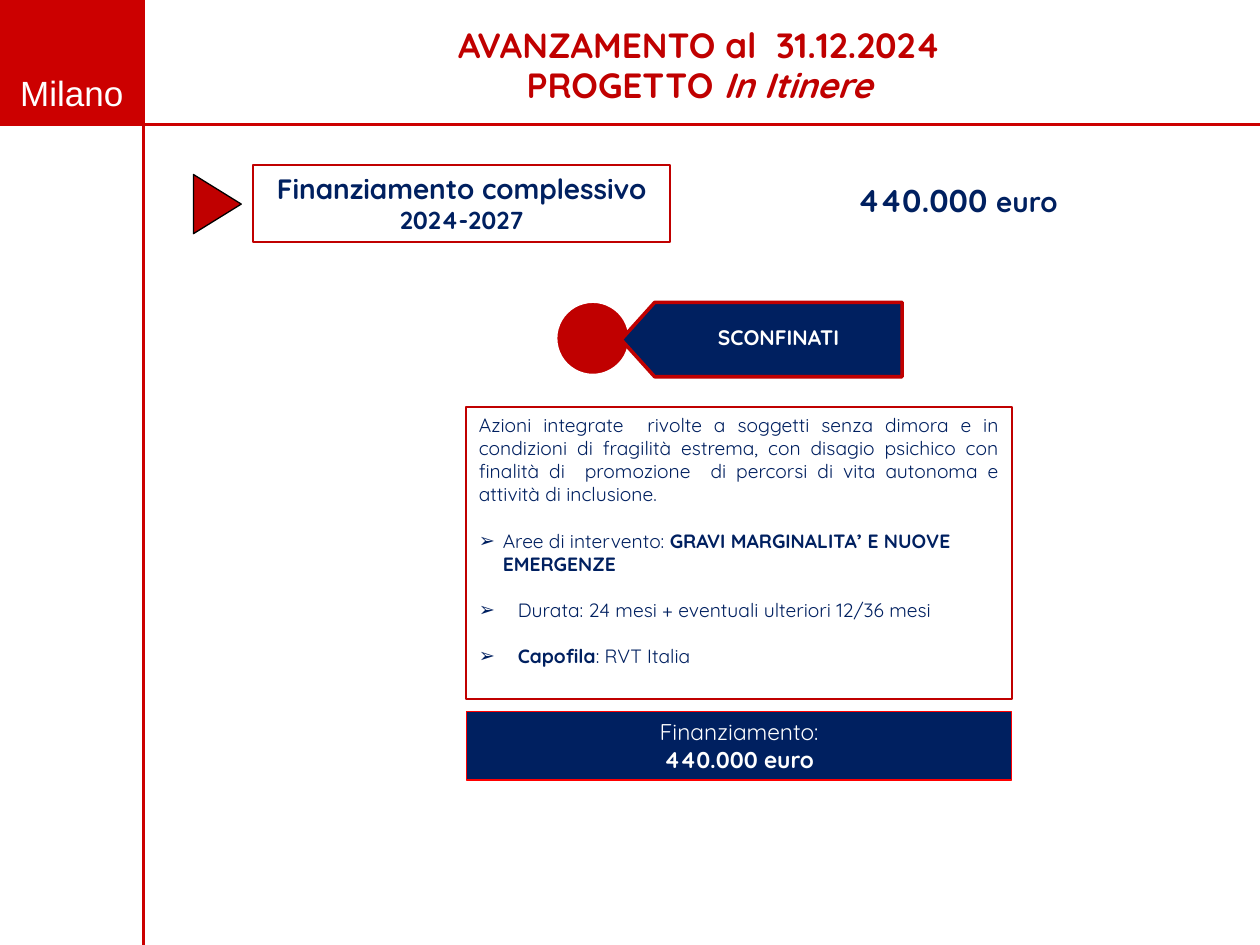
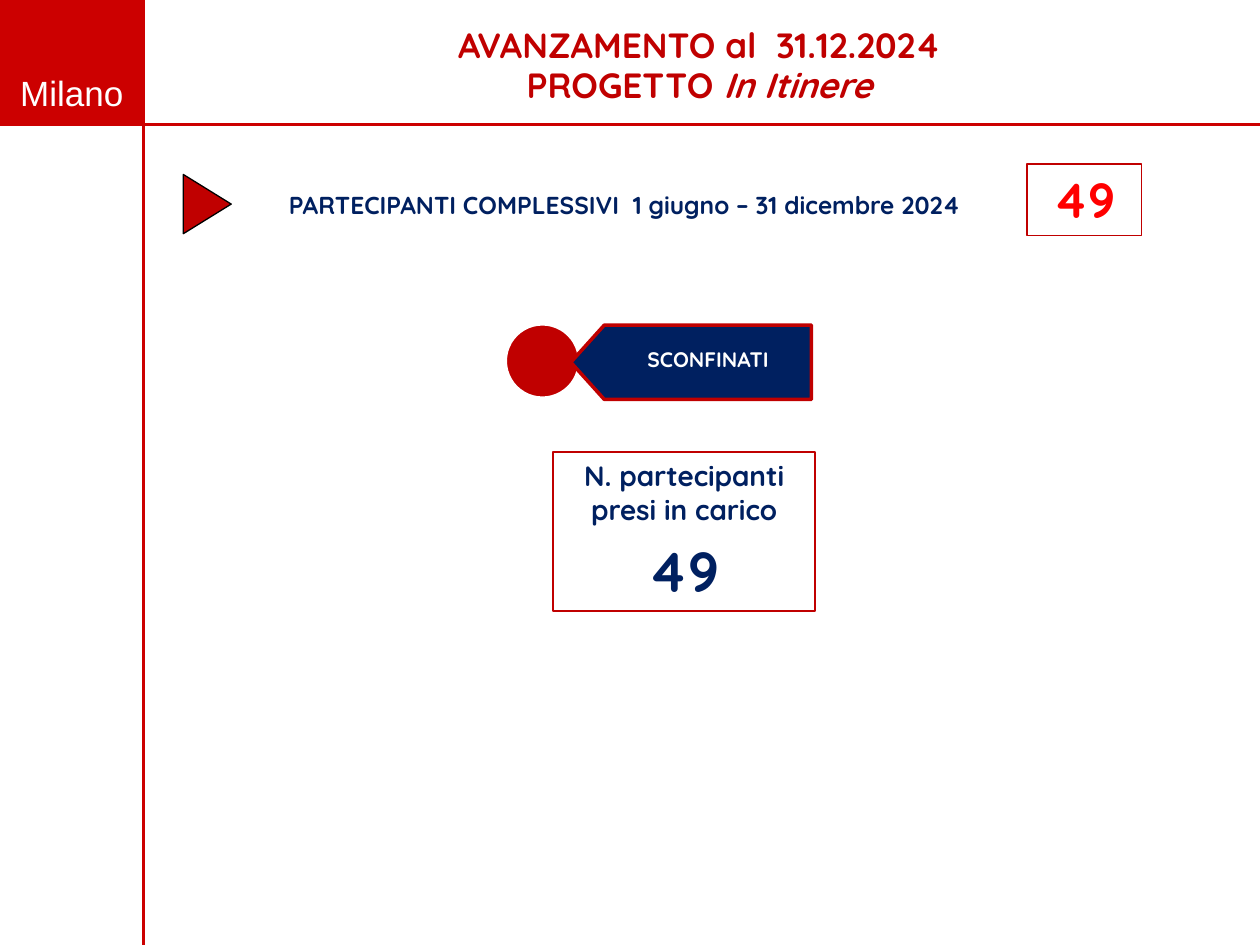
from lxml import etree
from pptx import Presentation
from pptx import util as u
from pptx.dml.color import RGBColor
from pptx.enum import shapes, text
from pptx.oxml import ns

FRAME_RED = RGBColor(0xCC, 0x00, 0x00)
RED = RGBColor(0xC0, 0x00, 0x00)
BRIGHT_RED = RGBColor(0xFF, 0x00, 0x00)
NAVY = RGBColor(0x00, 0x20, 0x60)
WHITE = RGBColor(0xFF, 0xFF, 0xFF)
BLACK = RGBColor(0x00, 0x00, 0x00)

FONT = "Quicksand"
BAND_WIDTH, BAND_HEIGHT = 1.14, 0.99
TOP, MIDDLE = text.MSO_ANCHOR.TOP, text.MSO_ANCHOR.MIDDLE
CENTER, LEFT, JUSTIFY = text.PP_ALIGN.CENTER, text.PP_ALIGN.LEFT, text.PP_ALIGN.JUSTIFY
BOLD = {"bold": True}


def apply_format(target, values):
    for name, value in values.items():
        setattr(target, name, value)


def place(*lengths):
    return [u.Inches(length) for length in lengths]


def set_list_marker(paragraph, indent, marker):
    properties = paragraph._p.get_or_add_pPr()
    properties.set("marL", str(u.Inches(indent)))
    properties.set("indent", str(-u.Inches(indent)))
    if marker:
        bullet = etree.SubElement(properties, ns.qn("a:buChar"))
        bullet.set("char", marker)
    else:
        etree.SubElement(properties, ns.qn("a:buNone"))


def add_runs(paragraph, runs, size, color, font=FONT):
    for words, style in runs:
        if words == "\n":
            paragraph.add_line_break()
            continue
        run = paragraph.add_run()
        run.text = words
        apply_format(run.font, {"name": font, "size": u.Pt(size), **style})
        run.font.color.rgb = color


def prepare_frame(holder, anchor=TOP, left=0.1, right=0.1):
    frame = holder.text_frame
    apply_format(frame, {
        "word_wrap": True, "auto_size": text.MSO_AUTO_SIZE.NONE,
        "vertical_anchor": anchor,
        "margin_left": u.Inches(left), "margin_right": u.Inches(right),
        "margin_top": u.Inches(0.05), "margin_bottom": u.Inches(0.05),
    })
    return frame


def write_lines(holder, lines, color, font=FONT, spacing=None, **frame_options):
    frame = prepare_frame(holder, **frame_options)
    for index, (runs, size) in enumerate(lines):
        line = frame.add_paragraph() if index else frame.paragraphs[0]
        apply_format(line, {"alignment": CENTER, **(spacing or {})})
        add_runs(line, runs, size, color, font)
    return frame


def add_label(slide, position, lines, color, **options):
    label = slide.shapes.add_textbox(*place(*position))
    write_lines(label, lines, color, **options)
    return label


def set_outline(holder, color, width):
    holder.line.color.rgb = color
    holder.line.width = u.Pt(width)


def add_figure(slide, kind, position, fill=None, outline=None, width=1, rotation=0):
    figure = slide.shapes.add_shape(kind, *place(*position))
    figure.shadow.inherit = False
    figure.rotation = rotation
    if fill is None:
        figure.fill.background()
    else:
        figure.fill.solid()
        figure.fill.fore_color.rgb = fill
    if outline is None:
        figure.line.fill.background()
    else:
        set_outline(figure, outline, width)
    return figure


def add_box(slide, position, lines, color, fill=None, outline=RED, width=1):
    box = add_figure(slide, shapes.MSO_SHAPE.RECTANGLE, position, fill, outline, width)
    return write_lines(box, lines, color)


def add_rule(slide, *ends):
    rule = slide.shapes.add_connector(shapes.MSO_CONNECTOR.STRAIGHT, *place(*ends))
    set_outline(rule, FRAME_RED, 1.5)
    etree.SubElement(rule.element.spPr, ns.qn("a:effectLst"))
    return rule


def add_frame_to_master(deck, slide):
    band = add_figure(slide, shapes.MSO_SHAPE.RECTANGLE,
                      (0, 0, BAND_WIDTH, BAND_HEIGHT), FRAME_RED)
    rules = [add_rule(slide, 0, BAND_HEIGHT, 10, BAND_HEIGHT),
             add_rule(slide, BAND_WIDTH, 7.5, BAND_WIDTH, 0)]
    city = add_label(slide, (0, 0.52, BAND_WIDTH, 0.43),
                     [([("Milano", {})], 20)], WHITE, font="Arial")
    for part in (band, *rules, city):
        deck.slide_master.shapes.element.append(part.element)


def move(holder, position):
    sides = ("left", "top", "width", "height")
    apply_format(holder, dict(zip(sides, place(*position))))


def set_title(slide):
    title = slide.shapes.title
    move(title, (1.3, 0.13, 8.5, 0.79))
    runs = [("AVANZAMENTO al  31.12.2024", BOLD), ("\n", {}), ("PROGETTO ", BOLD),
            ("In Itinere", {"bold": True, "italic": True})]
    write_lines(title, [(runs, 20)], RED, anchor=MIDDLE, spacing={"line_spacing": 0.95})


def add_pointer(slide, left):
    add_figure(slide, shapes.MSO_SHAPE.ISOSCELES_TRIANGLE, (left, 1.43, 0.47, 0.38),
               RED, BLACK, 0.75, rotation=90)


def add_project_tag(slide, left, top, width):
    add_figure(slide, shapes.MSO_SHAPE.OVAL, (left, top, 0.59, 0.59), RED, WHITE, 2)
    tag_left = left + 0.52
    tag = add_figure(slide, shapes.MSO_SHAPE.PENTAGON, (tag_left, top + 0.01, width, 0.59),
                     NAVY, RED, 2, rotation=180)
    tag.adjustments[0] = 0.45
    add_label(slide, (tag_left + 0.15, top, width - 0.2, 0.59),
              [([("SCONFINATI", BOLD)], 12)], WHITE, anchor=MIDDLE, left=0.26, right=0.09,
              spacing={"line_spacing": 0.9, "space_after": u.Pt(4.2)})


def fill_description(body):
    move(body, (3.7, 3.23, 4.33, 2.32))
    set_outline(body, RED, 1)
    frame = prepare_frame(body)
    entries = [
        (0, None, JUSTIFY, [("Azioni integrate  rivolte a soggetti senza dimora e in condizioni "
                             "di fragilità estrema, con disagio psichico con finalità di  "
                             "promozione  di percorsi di vita autonoma e attività di "
                             "inclusione.", {})]),
        (0.19, "➢", LEFT, [("Aree di intervento: ", {}),
                           ("GRAVI MARGINALITA’ E NUOVE EMERGENZE", BOLD)]),
        (0.31, "➢", LEFT, [("Durata: 24 mesi + eventuali ulteriori 12/36 mesi", {})]),
        (0.31, "➢", LEFT, [("Capofila", BOLD), (": RVT Italia", {})]),
    ]
    for index, (indent, marker, alignment, runs) in enumerate(entries):
        entry = frame.add_paragraph() if index else frame.paragraphs[0]
        set_list_marker(entry, indent, marker)
        apply_format(entry, {"alignment": alignment,
                             "space_before": u.Pt(13.2 if index else 0)})
        add_runs(entry, runs, 11, NAVY)


def build_funding(slide):
    set_title(slide)
    add_pointer(slide, 1.49)
    add_box(slide, (2.01, 1.31, 3.31, 0.61),
            [([("Finanziamento complessivo", BOLD)], 16), ([("2024-2027", BOLD)], 14)], NAVY)
    add_label(slide, (5.63, 1.39, 3.94, 0.4),
              [([("440.000 ", BOLD), ("euro", {"bold": True, "size": u.Pt(16)})], 18)], NAVY)
    add_project_tag(slide, 4.41, 2.39, 2.23)
    fill_description(slide.placeholders[1])
    add_box(slide, (3.7, 5.65, 4.33, 0.54),
            [([("Finanziamento:", {})], 13), ([("440.000 euro", BOLD)], 13)],
            WHITE, NAVY, BRIGHT_RED, 0.75)


def build_participants(slide):
    set_title(slide)
    add_pointer(slide, 1.41)
    add_label(slide, (1.85, 1.46, 6.22, 0.34),
              [([("PARTECIPANTI COMPLESSIVI  1 giugno – 31 dicembre 2024", BOLD)], 14)], NAVY)
    add_box(slide, (8.15, 1.3, 0.91, 0.57), [([("49", BOLD)], 28)], BRIGHT_RED)
    add_project_tag(slide, 4.01, 2.57, 1.91)
    intake = add_box(slide, (4.39, 3.59, 2.08, 1.26),
                     [([("N. partecipanti presi in carico", BOLD)], 16),
                      ([("49", BOLD)], 32)], NAVY)
    intake.paragraphs[1].space_before = u.Pt(6)


def main():
    deck = Presentation()
    apply_format(deck, {"slide_width": u.Inches(10), "slide_height": u.Inches(7.5)})
    funding = deck.slides.add_slide(deck.slide_layouts[1])
    add_frame_to_master(deck, funding)
    build_funding(funding)
    build_participants(deck.slides.add_slide(deck.slide_layouts[5]))
    deck.save("out.pptx")


if __name__ == "__main__":
    main()
